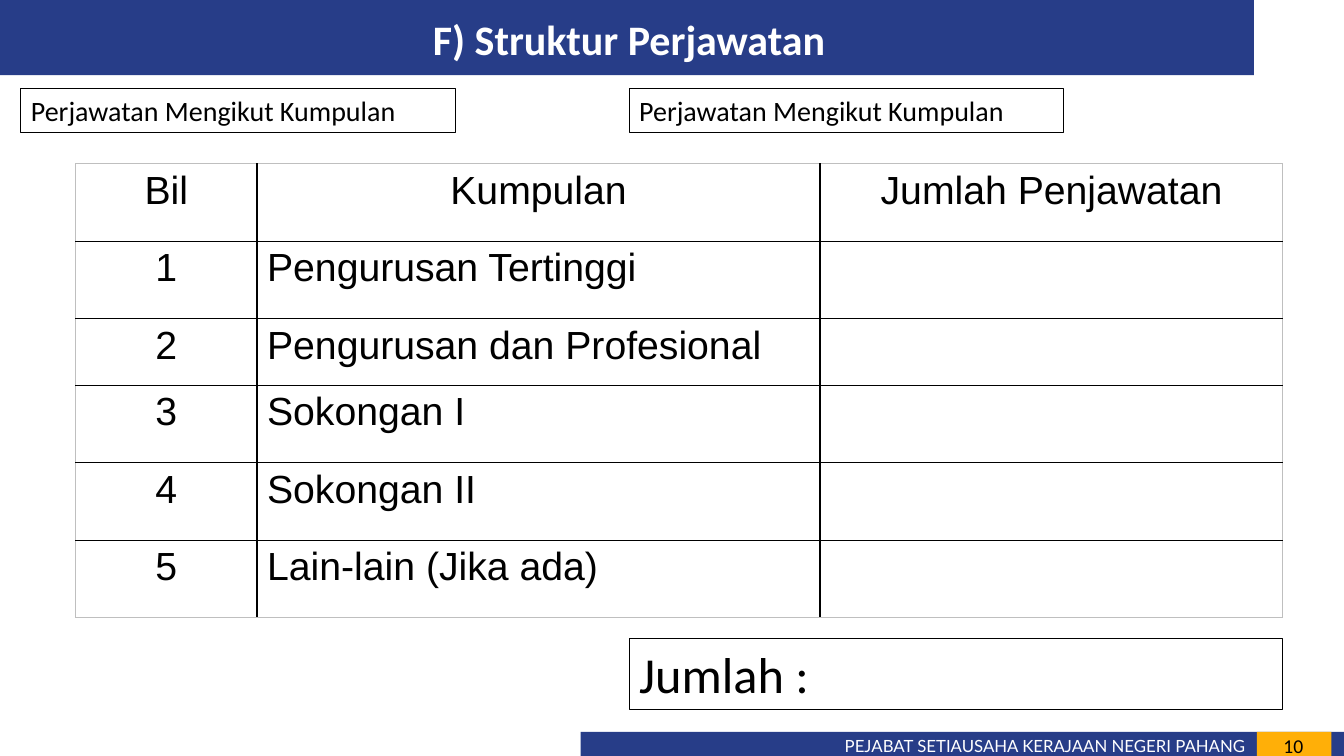
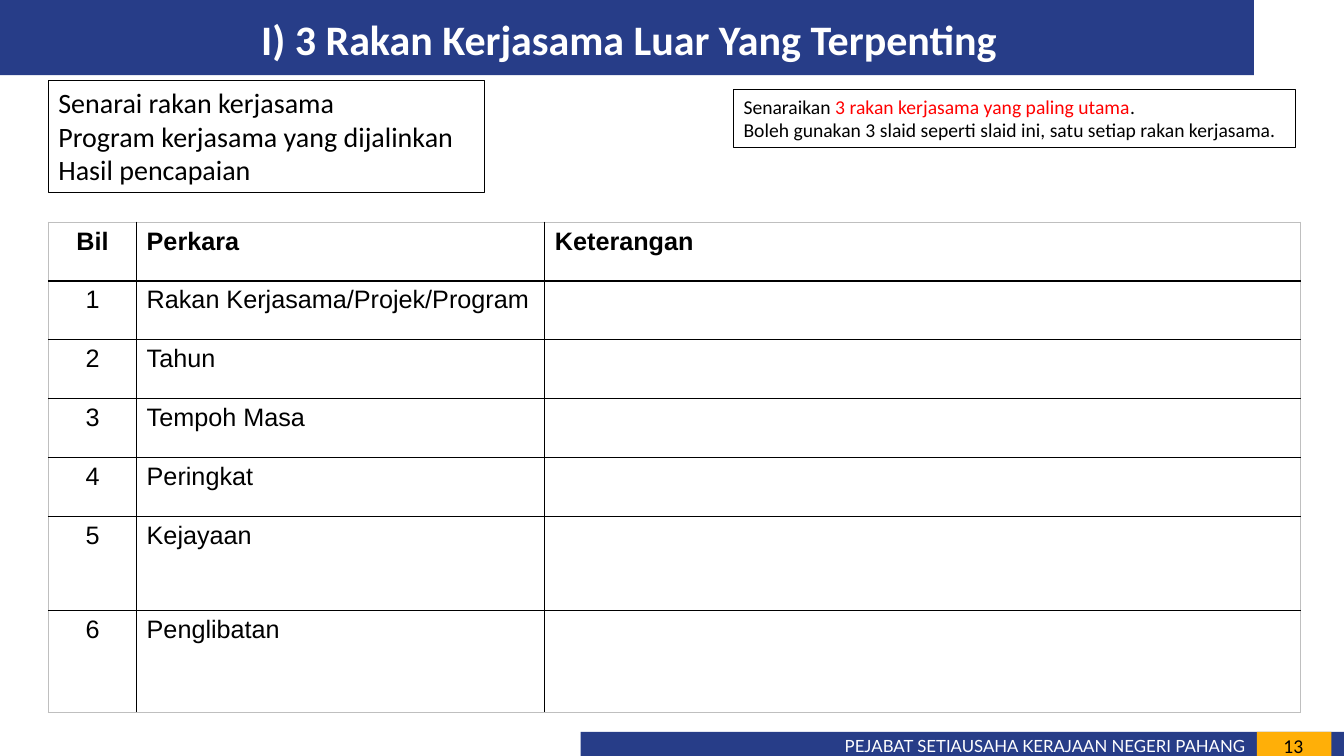
from lxml import etree
from pptx import Presentation
from pptx.dml.color import RGBColor
from pptx.enum.shapes import MSO_SHAPE
from pptx.enum.text import MSO_ANCHOR, MSO_AUTO_SIZE, PP_ALIGN
from pptx.oxml.ns import qn
from pptx.util import Pt

RECTANGLE = MSO_SHAPE.RECTANGLE
TOP, MIDDLE = MSO_ANCHOR.TOP, MSO_ANCHOR.MIDDLE
NO_AUTOFIT = MSO_AUTO_SIZE.NONE
LEFT, CENTER, RIGHT = PP_ALIGN.LEFT, PP_ALIGN.CENTER, PP_ALIGN.RIGHT

COLORS = {
    "navy": "273D88",
    "amber": "FFAF08",
    "white": "FFFFFF",
    "black": "000000",
    "red": "FF0000",
    "frame": "BFBFBF",
}
SLIDE_WIDTH, SLIDE_HEIGHT = 960, 540
FOOTER_TOP = 522.7
OFFICE = "PEJABAT SETIAUSAHA KERAJAAN NEGERI PAHANG"


def rgb(name):
    return RGBColor.from_string(COLORS[name])


def points(*lengths):
    return [Pt(length) for length in lengths]


def write(frame, paragraphs, size=20, font="Calibri", color="black", bold=False,
          align=LEFT, anchor=TOP, insets=(7.2, 3.6, 7.2, 3.6)):
    frame.word_wrap = True
    frame.auto_size = NO_AUTOFIT
    frame.vertical_anchor = anchor
    (frame.margin_left, frame.margin_top,
     frame.margin_right, frame.margin_bottom) = points(*insets)
    for index, content in enumerate(paragraphs):
        paragraph = frame.add_paragraph() if index else frame.paragraphs[0]
        paragraph.alignment = align
        pieces = [(content, color)] if isinstance(content, str) else content
        for text, piece_color in pieces:
            run = paragraph.add_run()
            run.text = text
            run.font.size = Pt(size)
            run.font.name = font
            run.font.bold = bold
            run.font.color.rgb = rgb(piece_color)


def add_rectangle(slide, bounds, fill=None, line=None):
    rectangle = slide.shapes.add_shape(RECTANGLE, *points(*bounds))
    rectangle.shadow.inherit = False
    if fill:
        rectangle.fill.solid()
        rectangle.fill.fore_color.rgb = rgb(fill)
    else:
        rectangle.fill.background()
    if line:
        rectangle.line.color.rgb = rgb(line)
        rectangle.line.width = Pt(0.75)
    else:
        rectangle.line.fill.background()
    return rectangle


def add_note(slide, bounds, paragraphs, **text_format):
    note = add_rectangle(slide, bounds, line="black")
    write(note.text_frame, paragraphs, **text_format)


def add_label(slide, bounds, text, **text_format):
    label = slide.shapes.add_textbox(*points(*bounds))
    write(label.text_frame, [text], **text_format)


def add_titled_slide(deck, title_text, number):
    slide = deck.slides.add_slide(deck.slide_layouts[5])
    add_rectangle(slide, (0, 0, 895.7, 53.6), "navy")
    footer_height = SLIDE_HEIGHT - FOOTER_TOP
    add_rectangle(slide, (414.7, FOOTER_TOP, SLIDE_WIDTH - 414.7, footer_height), "navy")
    add_rectangle(slide, (897.8, FOOTER_TOP, 53.3, footer_height), "amber")
    add_label(slide, (541.4, 524.9, 348.5, 15), OFFICE, size=12, font="Lato",
              color="white", align=RIGHT, insets=(0, 0.7, 0, 0))
    add_label(slide, (905.8, 521, 36, 19), number, size=14, align=CENTER)

    title = slide.shapes.title
    title.left, title.top, title.width, title.height = points(15, 5.8, 869, 44)
    write(title.text_frame, [title_text], size=30, color="white", bold=True,
          align=CENTER, anchor=MIDDLE)
    slide.shapes.element.append(title.element)
    return slide


def set_borders(cell, edge_colors):
    properties = cell._tc.get_or_add_tcPr()
    for index, (side, color) in enumerate(zip("LRTB", edge_colors)):
        border = etree.Element(qn(f"a:ln{side}"), w=str(Pt(1)))
        fill = etree.SubElement(border, qn("a:solidFill"))
        etree.SubElement(fill, qn("a:srgbClr"), val=COLORS[color])
        properties.insert(index, border)


def add_grid(slide, corner, widths, heights, headings, items, size,
             heading_align=LEFT, heading_bold=False):
    bounds = (*corner, sum(widths), sum(heights))
    table = slide.shapes.add_table(len(heights), len(widths), *points(*bounds)).table
    table.first_row = table.horz_banding = False
    for column, width in zip(table.columns, widths):
        column.width = Pt(width)
    for row, height in zip(table.rows, heights):
        row.height = Pt(height)

    rows = [headings] + [(str(n), item, "") for n, item in enumerate(items, 1)]
    last_row, last_column = len(heights) - 1, len(widths) - 1
    for r, texts in enumerate(rows):
        for c, text in enumerate(texts):
            cell = table.cell(r, c)
            cell.fill.background()
            outer_edges = (c == 0, c == last_column, r == 0, r == last_row)
            set_borders(cell, ["frame" if outer else "black" for outer in outer_edges])
            if text:
                body_align = CENTER if c == 0 else LEFT
                cell_align = heading_align if r == 0 and c else body_align
                write_cell(cell, text, size, cell_align, heading_bold and r == 0)


def write_cell(cell, text, size, align, bold):
    paragraph = cell.text_frame.paragraphs[0]
    paragraph.alignment = align
    run = paragraph.add_run()
    run.text = text
    run.font.size = Pt(size)
    run.font.name = "Arial"
    run.font.bold = bold
    run.font.color.rgb = rgb("black")


def build_staffing(deck):
    slide = add_titled_slide(deck, "F) Struktur Perjawatan", "10")
    for left in (15, 449.5):
        add_note(slide, (left, 63.3, 310.5, 31.7), ["Perjawatan Mengikut Kumpulan"])
    add_grid(
        slide, (54, 117), (129.6, 402.2, 330.6), (55.3, 55.3, 47.8, 55.3, 55.3, 55.3),
        ("Bil", "Kumpulan", "Jumlah Penjawatan"),
        ("Pengurusan Tertinggi", "Pengurusan dan Profesional", "Sokongan I",
         "Sokongan II", "Lain-lain (Jika ada)"),
        size=28, heading_align=CENTER)
    add_note(slide, (449.5, 456, 466.7, 51), ["Jumlah :"], size=36)


def build_partners(deck):
    slide = add_titled_slide(deck, "I) 3 Rakan Kerjasama Luar Yang Terpenting", "13")
    add_note(slide, (34.6, 57.5, 311.8, 80),
             ["Senarai rakan kerjasama", "Program kerjasama yang dijalinkan",
              "Hasil pencapaian"])
    add_grid(
        slide, (34.6, 158.8), (63, 291.6, 539.6), [42] * 5 + [67.6, 72.4],
        ("Bil", "Perkara", "Keterangan"),
        ("Rakan Kerjasama/Projek/Program", "Tahun", "Tempoh Masa", "Peringkat",
         "Kejayaan", "Penglibatan"),
        size=18, heading_bold=True)
    add_note(slide, (524, 64, 401.3, 41.2),
             [[("Senaraikan ", "black"),
               ("3 rakan kerjasama yang paling utama", "red"), (".", "black")],
              "Boleh gunakan 3 slaid seperti slaid ini, satu setiap rakan kerjasama."],
             size=14)


def main():
    deck = Presentation()
    deck.slide_width, deck.slide_height = points(SLIDE_WIDTH, SLIDE_HEIGHT)
    build_staffing(deck)
    build_partners(deck)
    deck.save("out.pptx")


if __name__ == "__main__":
    main()
